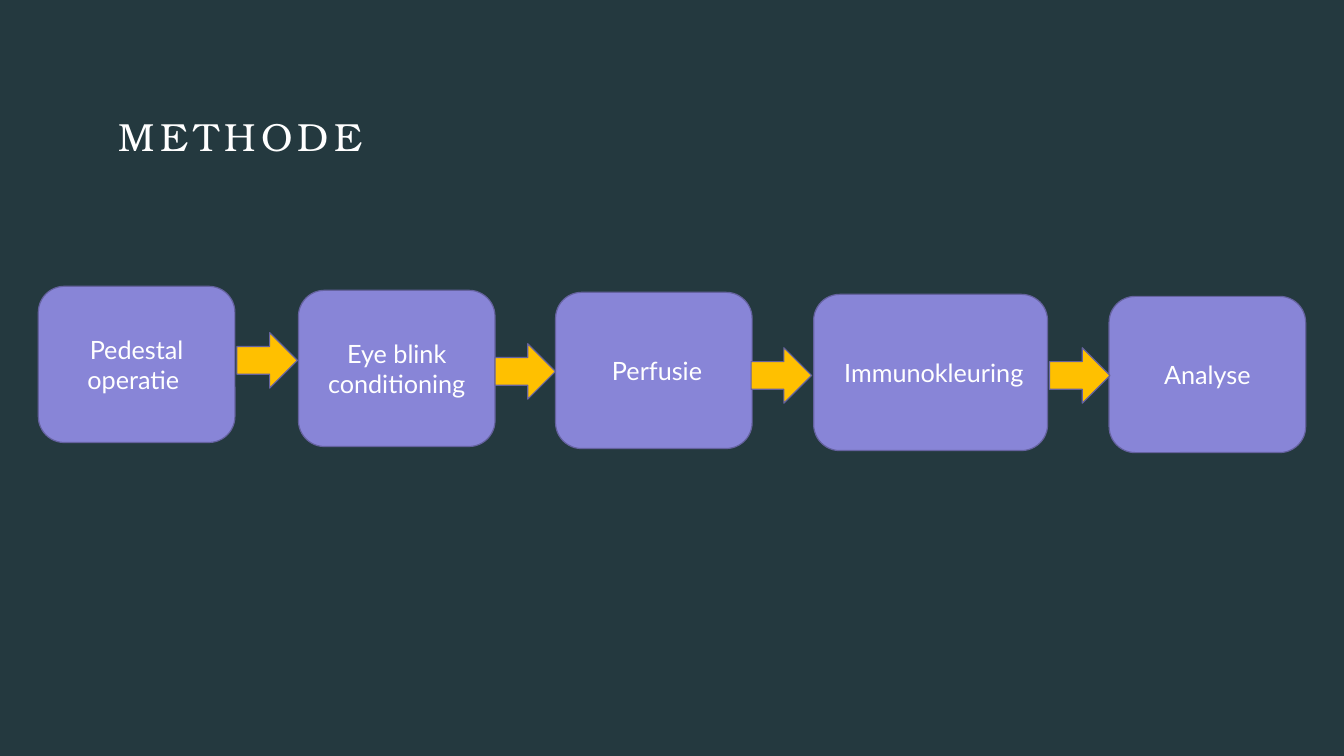
import pptx
import pptx.util
import pptx.dml.color
import pptx.enum.shapes
import pptx.enum.text

TITLE = "METHODE"
STEPS = [
    ("Pedestal operatie ", 0.38, 2.84, 1.95),
    ("Eye blink conditioning", 2.96, 2.88, 1.95),
    (" Perfusie", 5.51, 2.9, 1.95),
    (" Immunokleuring", 8.07, 2.92, 2.32),
    ("Analyse", 11, 2.94, 1.95),
]
ARROWS = [(2.35, 3.3), (4.91, 3.41), (7.45, 3.45), (10.41, 3.45)]
STEP_HEIGHT = 1.55
ARROW_SIZE = (0.6, 0.55)
COLORS = {
    "background": "24393F",
    "step": "8885D7",
    "outline": "65629F",
    "arrow": "FFC000",
    "text": "FFFFFF",
}

Inches = pptx.util.Inches
SHAPES = pptx.enum.shapes.MSO_SHAPE
ALIGN = pptx.enum.text.PP_ALIGN
ANCHOR = pptx.enum.text.MSO_ANCHOR


def color(name):
    return pptx.dml.color.RGBColor.from_string(COLORS[name])


def write(frame, text, font="Lato", size=18, align=ALIGN.CENTER,
          anchor=ANCHOR.MIDDLE, spacing=0):
    frame.word_wrap = True
    frame.vertical_anchor = anchor
    para = frame.paragraphs[0]
    para.alignment = align
    span = para.add_run()
    span.text = text
    span.font.name = font
    span.font.size = pptx.util.Pt(size)
    span.font.color.rgb = color("text")
    if spacing:
        span.font._element.set("spc", str(spacing * 100))


def add_box(page, kind, left, top, width, height, fill):
    box = page.shapes.add_shape(
        kind, Inches(left), Inches(top), Inches(width), Inches(height))
    box.shadow.inherit = False
    box.fill.solid()
    box.fill.fore_color.rgb = color(fill)
    box.line.color.rgb = color("outline")
    box.line.width = pptx.util.Pt(0.85)
    return box


def main():
    deck = pptx.Presentation()
    deck.slide_width, deck.slide_height = Inches(13.33), Inches(7.5)
    page = deck.slides.add_slide(deck.slide_layouts[6])
    page.background.fill.solid()
    page.background.fill.fore_color.rgb = color("background")

    title = page.shapes.add_textbox(
        Inches(1.18), Inches(1.11), Inches(10.97), Inches(0.72)).text_frame
    title.margin_left = title.margin_right = 0
    title.margin_top = title.margin_bottom = 0
    write(title, TITLE, font="TeX Gyre Bonum", size=28, align=ALIGN.LEFT,
          anchor=ANCHOR.TOP, spacing=4)

    for text, left, top, width in STEPS:
        step = add_box(page, SHAPES.ROUNDED_RECTANGLE, left, top, width,
                       STEP_HEIGHT, "step")
        write(step.text_frame, text)
    for left, top in ARROWS:
        add_box(page, SHAPES.RIGHT_ARROW, left, top, *ARROW_SIZE, "arrow")

    deck.save("out.pptx")


if __name__ == "__main__":
    main()
